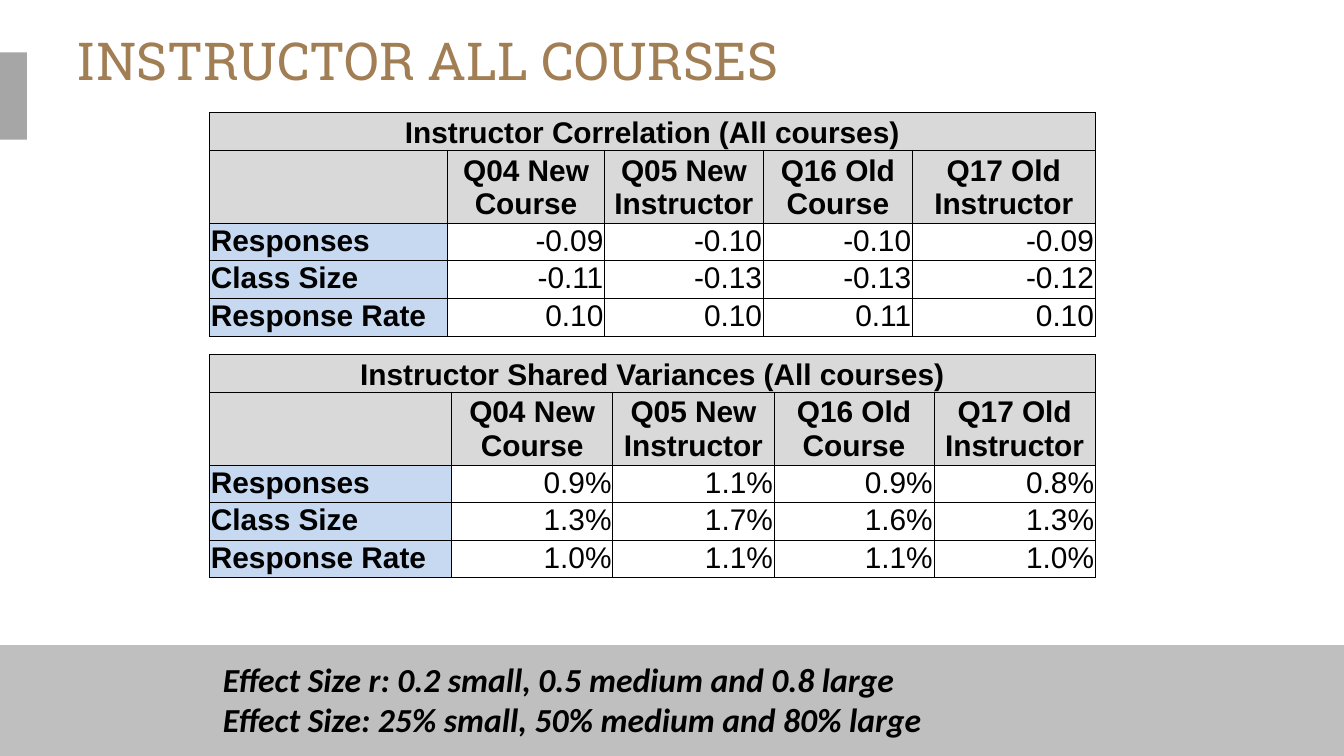
"""Build the slide on instructor correlations and shared variances."""
from dataclasses import dataclass

from lxml import etree
from pptx import Presentation
from pptx import util as u
from pptx.dml.color import RGBColor
from pptx.enum import shapes, text
from pptx.oxml.ns import qn

TITLE = "INSTRUCTOR ALL COURSES"
EFFECT_SIZES = [
    "Effect Size r: 0.2 small, 0.5 medium and 0.8 large",
    "Effect Size: 25% small, 50% medium and 80% large",
]
QUESTIONS = ["", "Q04 New Course", "Q05 New Instructor", "Q16 Old Course", "Q17 Old Instructor"]
TABLES = [
    {
        "heading": "Instructor Correlation (All courses)",
        "top": 0.84,
        "columns": [1.77, 1.17, 1.18, 1.11, 1.36],
        "measures": [
            ["Responses", "-0.09", "-0.10", "-0.10", "-0.09"],
            ["Class Size", "-0.11", "-0.13", "-0.13", "-0.12"],
            ["Response Rate", "0.10", "0.10", "0.11", "0.10"],
        ],
    },
    {
        "heading": "Instructor Shared Variances (All courses)",
        "top": 2.64,
        "columns": [1.8, 1.2, 1.2, 1.19, 1.2],
        "measures": [
            ["Responses", "0.9%", "1.1%", "0.9%", "0.8%"],
            ["Class Size", "1.3%", "1.7%", "1.6%", "1.3%"],
            ["Response Rate", "1.0%", "1.1%", "1.1%", "1.0%"],
        ],
    },
]
WIDTH = 10
HEIGHT = WIDTH * 9 / 16
FOOTER_TOP = 4.8
LEFT = 1.56
ROW_HEIGHTS = [0.27, 0.54, 0.28, 0.28, 0.28]


@dataclass(frozen=True)
class Theme:
    title_font: str = "Roboto Slab"
    table_font: str = "Arial"
    note_font: str = "Calibri"
    title_size: int = 28
    table_size: int = 16
    note_size: int = 18
    title: str = "A27E55"
    ink: str = "000000"
    footer: str = "BFBFBF"
    tab: str = "A6A6A6"
    header: str = "D9D9D9"
    measure: str = "C6D9F1"
    value: str = "FFFFFF"
    border: float = 0.5


THEME = Theme()


def set_font(paragraph, name, size, color, bold=False, italic=False):
    font = paragraph.font
    font.name, font.size = name, u.Pt(size)
    font.bold, font.italic = bold, italic
    font.color.rgb = RGBColor.from_string(color)


def add_band(slide, box, color):
    band = slide.shapes.add_shape(shapes.MSO_SHAPE.RECTANGLE, *map(u.Inches, box))
    band.shadow.inherit = False
    band.fill.solid()
    band.fill.fore_color.rgb = RGBColor.from_string(color)
    band.line.fill.background()


def add_text(slide, box, lines, wrap, inset, **style):
    frame = slide.shapes.add_textbox(*map(u.Inches, box)).text_frame
    frame.word_wrap = wrap
    frame.margin_left = frame.margin_right = u.Inches(inset)
    frame.margin_top = frame.margin_bottom = u.Inches(inset / 2)
    frame.text = "\n".join(lines)
    for paragraph in frame.paragraphs:
        set_font(paragraph, **style)


def add_borders(cell):
    properties = cell._tc.get_or_add_tcPr()
    for side in ("a:lnL", "a:lnR", "a:lnT", "a:lnB"):
        line = etree.SubElement(properties, qn(side), w=str(u.Pt(THEME.border)))
        fill = etree.SubElement(line, qn("a:solidFill"))
        etree.SubElement(fill, qn("a:srgbClr"), val=THEME.ink)


def style_cell(cell, row, column):
    add_borders(cell)
    cell.margin_left = cell.margin_right = cell.margin_top = u.Inches(0.01)
    cell.margin_bottom = 0
    align, anchor = text.PP_ALIGN, text.MSO_ANCHOR
    if row < 2:
        color, alignment = THEME.header, align.CENTER
        cell.vertical_anchor = anchor.MIDDLE if row else anchor.BOTTOM
    elif column == 0:
        color, alignment = THEME.measure, align.LEFT
    else:
        color, alignment = THEME.value, align.RIGHT
    cell.fill.solid()
    cell.fill.fore_color.rgb = RGBColor.from_string(color)
    paragraph = cell.text_frame.paragraphs[0]
    paragraph.alignment = alignment
    set_font(paragraph, THEME.table_font, THEME.table_size, THEME.ink,
             bold=row < 2 or column == 0)


def add_results(slide, results):
    widths = results["columns"]
    rows = [[results["heading"]] + [""] * (len(widths) - 1), QUESTIONS, *results["measures"]]
    box = LEFT, results["top"], sum(widths), sum(ROW_HEIGHTS)
    table = slide.shapes.add_table(len(rows), len(widths), *map(u.Inches, box)).table
    table.first_row = table.horz_banding = False
    for column, width in zip(table.columns, widths):
        column.width = u.Inches(width)
    for row, height in zip(table.rows, ROW_HEIGHTS):
        row.height = u.Inches(height)
    for r, row in enumerate(rows):
        for c, content in enumerate(row):
            cell = table.cell(r, c)
            cell.text = content
            style_cell(cell, r, c)
    table.cell(0, 0).merge(table.cell(0, len(widths) - 1))


def main():
    deck = Presentation()
    deck.slide_width, deck.slide_height = u.Inches(WIDTH), u.Inches(HEIGHT)
    slide = deck.slides.add_slide(deck.slide_layouts[6])
    add_band(slide, (0, FOOTER_TOP, WIDTH, HEIGHT - FOOTER_TOP), THEME.footer)
    add_band(slide, (-0.03, 0.39, 0.23, 0.65), THEME.tab)
    add_text(slide, (0.57, 0.21, 9, 0.63), [TITLE], True, 0,
             name=THEME.title_font, size=THEME.title_size, color=THEME.title)
    add_text(slide, (LEFT, 4.85, 5.47, 0.71), EFFECT_SIZES, False, 0.1,
             name=THEME.note_font, size=THEME.note_size, color=THEME.ink,
             bold=True, italic=True)
    for results in TABLES:
        add_results(slide, results)
    deck.save("out.pptx")


if __name__ == "__main__":
    main()
